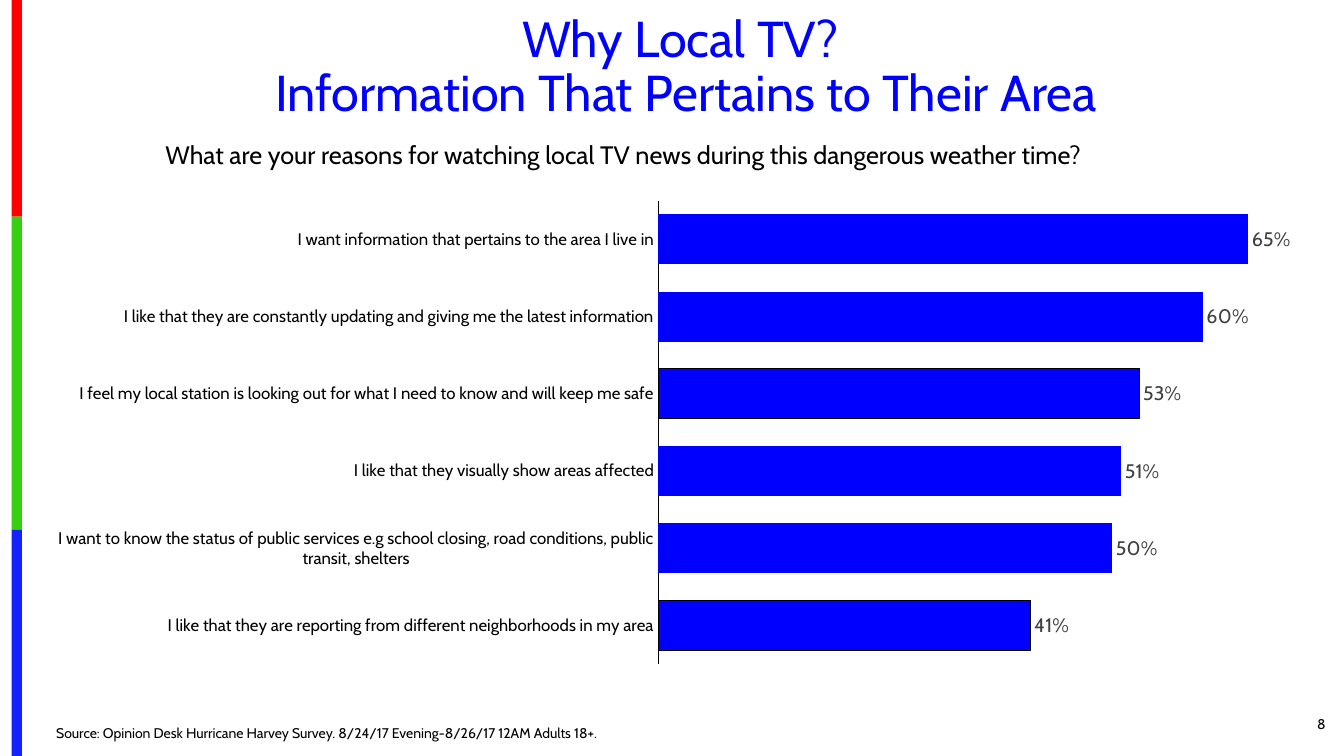
"""Builds the slide on reasons for watching local TV news."""
from dataclasses import dataclass

import lxml.etree
import pptx
import pptx.chart.data
import pptx.dml.color
import pptx.enum.chart
import pptx.enum.shapes
import pptx.enum.text
import pptx.oxml.ns
import pptx.util

SLIDE_WIDTH = pptx.util.Inches(13.33)
SLIDE_HEIGHT = pptx.util.Inches(7.5)
COLUMNS, ROWS = 160, 90
FONT = "Cabin"
BLACK, BLUE, GREY = "000000", "0000FF", "404040"
ALIGN = pptx.enum.text.PP_ALIGN
ANCHOR = pptx.enum.text.MSO_ANCHOR


@dataclass(frozen=True)
class Area:
    """A rectangle in grid columns and rows."""
    column: float
    row: float
    columns: float
    rows: float

    def lengths(self) -> tuple[int, int, int, int]:
        """Return left, top, width and height."""
        across, down = SLIDE_WIDTH / COLUMNS, SLIDE_HEIGHT / ROWS
        return (round(self.column * across), round(self.row * down),
                round(self.columns * across), round(self.rows * down))


@dataclass(frozen=True)
class Stripe:
    """One coloured piece of the left edge."""
    rows: float
    color: str


@dataclass(frozen=True)
class Reason:
    """One survey answer; some bars have an outline."""
    label: str
    share: float
    outlined: bool = False


STRIPES = [Stripe(25.8, "FE0000"), Stripe(37.3, "36CF12"), Stripe(26.9, "1322FE")]
REASONS = [
    Reason("I want information that pertains to the area I live in", 0.65),
    Reason("I like that they are constantly updating and giving me the latest information", 0.6),
    Reason("I feel my local station is looking out for what I need to know and will keep me safe",
           0.53, True),
    Reason("I like that they visually show areas affected", 0.51),
    Reason("I want to know the status of public services e.g school closing, road conditions, "
           "public transit, shelters", 0.5),
    Reason("I like that they are reporting from different neighborhoods in my area", 0.41, True),
]


def rgb(color: str) -> pptx.dml.color.RGBColor:
    """Turn a hex string into a colour."""
    return pptx.dml.color.RGBColor.from_string(color)


def format_font(font, size: float, color: str = BLACK) -> None:
    """Set the face, size and colour of a font."""
    font.name, font.size = FONT, pptx.util.Pt(size)
    font.color.rgb = rgb(color)


def write_text(shape, text: str, *, size: float, color: str = BLACK, align=ALIGN.LEFT,
               anchor=ANCHOR.TOP, line_spacing: float = 1.0) -> None:
    """Fill a shape with one formatted paragraph."""
    frame = shape.text_frame
    frame.word_wrap = True
    frame.auto_size = pptx.enum.text.MSO_AUTO_SIZE.NONE
    frame.vertical_anchor = anchor
    paragraph = frame.paragraphs[0]
    paragraph.text = text
    paragraph.alignment = align
    paragraph.line_spacing = line_spacing
    for run in paragraph.runs:
        format_font(run.font, size, color)


def add_text(slide, area: Area, text: str, **text_format) -> None:
    """Add a text box."""
    write_text(slide.shapes.add_textbox(*area.lengths()), text, **text_format)


def add_stripes(slide) -> None:
    """Stack the stripes down the left edge."""
    row = 0.0
    for stripe in STRIPES:
        shape = slide.shapes.add_shape(pptx.enum.shapes.MSO_SHAPE.RECTANGLE,
                                       *Area(1.4, row, 1.2, stripe.rows).lengths())
        shape.shadow.inherit = False
        shape.fill.solid()
        shape.fill.fore_color.rgb = rgb(stripe.color)
        shape.line.fill.background()
        row += stripe.rows


def add_title(slide, area: Area, text: str) -> None:
    """Place and format the title placeholder."""
    title = slide.shapes.title
    title.left, title.top, title.width, title.height = area.lengths()
    write_text(title, text, size=36, color=BLUE, align=ALIGN.CENTER,
               anchor=ANCHOR.MIDDLE, line_spacing=0.9)


def place_plot(chart, **shares: float) -> None:
    """Fix the inner plot area in shares of the chart."""
    qn = pptx.oxml.ns.qn
    plot_area = chart.element.find(f"{qn('c:chart')}/{qn('c:plotArea')}")
    for layout in plot_area.findall(qn("c:layout")):
        plot_area.remove(layout)
    layout = lxml.etree.Element(qn("c:layout"))
    manual = lxml.etree.SubElement(layout, qn("c:manualLayout"))
    settings = {"layoutTarget": "inner", "xMode": "edge", "yMode": "edge", **shares}
    for name, value in settings.items():
        lxml.etree.SubElement(manual, qn(f"c:{name}")).set("val", str(value))
    plot_area.insert(0, layout)


def add_reasons_chart(slide, area: Area) -> None:
    """Add the bar chart of reasons."""
    data = pptx.chart.data.CategoryChartData(number_format="0%")
    data.categories = [reason.label for reason in REASONS]
    data.add_series("Series 1", [reason.share for reason in REASONS])
    chart = slide.shapes.add_chart(pptx.enum.chart.XL_CHART_TYPE.BAR_CLUSTERED,
                                   *area.lengths(), data).chart
    chart.has_title = chart.has_legend = False
    format_font(chart.font, 10)
    place_plot(chart, x=0.481, y=0.01, w=0.499, h=0.846)

    categories, values = chart.category_axis, chart.value_axis
    categories.reverse_order = True
    categories.major_tick_mark = pptx.enum.chart.XL_TICK_MARK.NONE
    categories.format.line.color.rgb = rgb(BLACK)
    categories.format.line.width = pptx.util.Pt(0.75)
    format_font(categories.tick_labels.font, 12)
    values.minimum_scale, values.maximum_scale = 0, 0.7
    values.has_major_gridlines = False
    values.visible = False

    plot = chart.plots[0]
    plot.gap_width = 55
    plot.vary_by_categories = False
    series = plot.series[0]
    series.format.fill.solid()
    series.format.fill.fore_color.rgb = rgb(BLUE)
    for index, reason in enumerate(REASONS):
        if reason.outlined:
            bar = series.points[index].format
            bar.fill.solid()
            bar.fill.fore_color.rgb = rgb(BLUE)
            bar.line.color.rgb = rgb(BLACK)
            bar.line.width = pptx.util.Pt(0.75)
    labels = series.data_labels
    labels.show_value = True
    labels.number_format, labels.number_format_is_linked = "0%", False
    labels.position = pptx.enum.chart.XL_LABEL_POSITION.OUTSIDE_END
    format_font(labels.font, 14, GREY)


def main() -> None:
    """Build and save the presentation."""
    presentation = pptx.Presentation()
    presentation.slide_width, presentation.slide_height = SLIDE_WIDTH, SLIDE_HEIGHT
    slide = presentation.slides.add_slide(presentation.slide_layouts.get_by_name("Title Only"))
    add_stripes(slide)
    add_title(slide, Area(3, 1, 156, 14.25),
              "Why Local TV?\v Information That Pertains to Their Area")
    add_reasons_chart(slide, Area(5.5, 23.25, 151.5, 65.25))
    add_text(slide, Area(146, 83.75, 13, 4.8), "8", size=10, align=ALIGN.RIGHT,
             anchor=ANCHOR.MIDDLE)
    add_text(slide, Area(18.5, 16, 138.5, 4.8),
             "What are your reasons for watching local TV news during this dangerous weather time?",
             size=18)
    add_text(slide, Area(5.5, 85.9, 113.4, 3),
             "Source: Opinion Desk Hurricane Harvey Survey. 8/24/17 Evening-8/26/17 12AM Adults 18+.",
             size=10, anchor=ANCHOR.BOTTOM, line_spacing=0.9)
    presentation.save("out.pptx")


if __name__ == "__main__":
    main()
